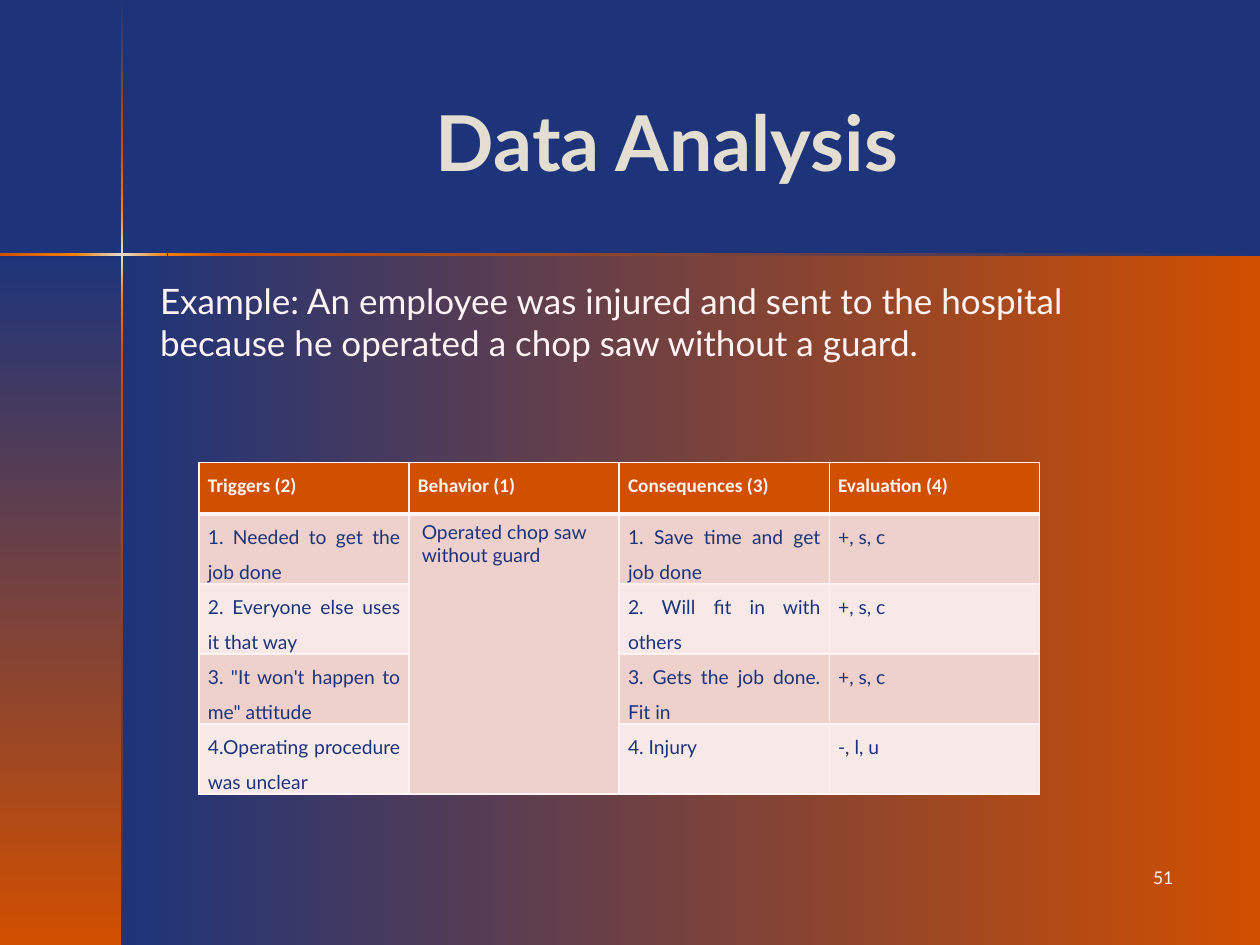
import pptx
import pptx.util
import pptx.dml.color
import pptx.enum.shapes
import pptx.enum.text
import pptx.oxml
import pptx.oxml.ns

Inches = pptx.util.Inches
Pt = pptx.util.Pt
ALIGN = pptx.enum.text.PP_ALIGN
ANCHOR = pptx.enum.text.MSO_ANCHOR

COLORS = {
    "navy": "1E347A",
    "rust": "D04F00",
    "orange": "F07F09",
    "cream": "E3DED1",
    "white": "FFF3F3",
    "band_dark": "EED0CC",
    "band_light": "F7E9E7",
}
NAMESPACE = pptx.oxml.ns.nsdecls("a")
RIGHT, DOWN = 0, 90

HEADERS = ["Triggers (2)", "Behavior (1)", "Consequences (3)", "Evaluation (4)"]
BEHAVIOR = "Operated chop saw without guard"
ROWS = [
    ["1. Needed to get the job done", BEHAVIOR, "1. Save time and get job done", "+, s, c"],
    ["2. Everyone else uses it that way", "", "2. Will fit in with others", "+, s, c"],
    ['3. "It won\'t happen to me" attitude', "", "3. Gets the job done. Fit in", "+, s, c"],
    ["4.Operating procedure was unclear", "", "4. Injury", "-, l, u"],
]


def rgb(name):
    return pptx.dml.color.RGBColor.from_string(COLORS[name])


def style(paragraph, size, color, font="Lato", bold=False, align=None):
    paragraph.font.size = Pt(size)
    paragraph.font.name = font
    paragraph.font.bold = bold
    paragraph.font.color.rgb = rgb(color)
    paragraph.alignment = align


def place(shape, box):
    shape.left, shape.top, shape.width, shape.height = map(Inches, box)


def add_gradient_bar(slide, box, names, angle):
    """Rectangle with evenly spaced gradient stops."""
    shape = slide.shapes.add_shape(
        pptx.enum.shapes.MSO_SHAPE.RECTANGLE, *map(Inches, box))
    shape.shadow.inherit = False
    shape.line.fill.background()
    shape.fill.gradient()
    gradient = shape._element.spPr.find(pptx.oxml.ns.qn("a:gradFill"))
    step = 100000 // (len(names) - 1)
    stops = "".join(
        f'<a:gs pos="{index * step}"><a:srgbClr val="{COLORS[name]}"/></a:gs>'
        for index, name in enumerate(names))
    gradient.getparent().replace(gradient, pptx.oxml.parse_xml(
        f'<a:gradFill {NAMESPACE} rotWithShape="1"><a:gsLst>{stops}</a:gsLst>'
        f'<a:lin ang="{angle * 60000}" scaled="0"/></a:gradFill>'))


def add_backdrop(slide, box):
    """Two gradient panels and a glowing cross where they meet."""
    left, top, width, height = box
    right, bottom = left + width, top + height
    cross_x, cross_y, thick = left + 0.97, top + 2.02, 0.02
    add_gradient_bar(slide, (cross_x, cross_y, right - cross_x, bottom - cross_y),
                     ["navy", "rust"], RIGHT)
    add_gradient_bar(slide, (left, cross_y, cross_x - left, bottom - cross_y),
                     ["navy", "rust"], DOWN)

    glow = ["orange", "cream", "orange"]
    vertical = [(0.01, 1.21, ["navy", "rust"]), (1.21, 1.65, ["rust", "orange"]),
                (1.65, 2.38, glow), (2.38, 2.82, ["orange", "rust"]),
                (2.82, height, ["rust", "navy"])]
    for start, end, names in vertical:
        add_gradient_bar(slide, (cross_x - thick / 2, top + start, thick, end - start),
                         names, DOWN)
    horizontal = [(0, 0.6, ["rust", "orange"]), (0.6, 1.33, glow),
                  (1.33, 1.77, ["orange", "rust"]), (1.77, width, ["rust", "navy"])]
    for start, end, names in horizontal:
        add_gradient_bar(slide, (left + start, cross_y - thick / 2, end - start, thick),
                         names, RIGHT)


def fill_title(slide, box):
    title = slide.shapes.title
    slide.shapes._spTree.append(title._element)  # bring in front of the backdrop
    place(title, box)
    title.text_frame.text = "Data Analysis"
    title.text_frame.vertical_anchor = ANCHOR.MIDDLE
    style(title.text_frame.paragraphs[0], 44, "cream", bold=True, align=ALIGN.CENTER)


def fill_body(slide, box):
    body = slide.placeholders[1]
    slide.shapes._spTree.append(body._element)
    place(body, box)
    body.text_frame.text = ("Example: An employee was injured and sent to the hospital "
                            "because he operated a chop saw without a guard.")
    body.text_frame.auto_size = pptx.enum.text.MSO_AUTO_SIZE.NONE
    paragraph = body.text_frame.paragraphs[0]
    style(paragraph, 20, "white", align=ALIGN.LEFT)
    paragraph.space_before = Pt(4)
    properties = paragraph._p.get_or_add_pPr()
    properties.set("marL", "0")
    properties.set("indent", "0")
    properties.append(pptx.oxml.parse_xml(f"<a:buNone {NAMESPACE}/>"))


def add_page_number(slide, box):
    text_frame = slide.shapes.add_textbox(*map(Inches, box)).text_frame
    text_frame.word_wrap = True
    text_frame.text = "51"
    style(text_frame.paragraphs[0], 10, "white", align=ALIGN.RIGHT)


def set_borders(cell, top, bottom):
    widths = {"lnL": 1, "lnR": 1, "lnT": top, "lnB": bottom}
    properties = cell._tc.get_or_add_tcPr()
    for index, (tag, width) in enumerate(widths.items()):
        properties.insert(index, pptx.oxml.parse_xml(
            f'<a:{tag} {NAMESPACE} w="{Pt(width)}"><a:solidFill>'
            f'<a:srgbClr val="{COLORS["white"]}"/></a:solidFill></a:{tag}>'))


def add_analysis_table(slide, box):
    left, top, width, row_height = box
    content = [HEADERS] + ROWS
    table = slide.shapes.add_table(
        len(content), len(HEADERS), Inches(left), Inches(top), Inches(width),
        Inches(row_height * len(content))).table
    table.cell(1, 1).merge(table.cell(len(ROWS), 1))

    for row, texts in enumerate(content):
        header = row == 0
        band = "rust" if header else "band_dark" if row % 2 else "band_light"
        for column, text in enumerate(texts):
            cell = table.cell(row, column)
            cell.fill.solid()
            cell.fill.fore_color.rgb = rgb(band)
            set_borders(cell, top=3 if row == 1 else 1, bottom=3 if header else 1)
            if cell.is_spanned:
                continue
            cell.text = text
            paragraph = cell.text_frame.paragraphs[0]
            if header:
                style(paragraph, 11, "white", "Calibri", True)
            else:
                style(paragraph, 11, "navy")
            if text != BEHAVIOR:
                paragraph.alignment = ALIGN.JUSTIFY
                paragraph.line_spacing = 1.5
                cell.margin_left = cell.margin_right = Inches(0.07)
                cell.margin_top = cell.margin_bottom = 0


def main():
    presentation = pptx.Presentation()
    presentation.slide_width, presentation.slide_height = Inches(10), Inches(7.5)
    slide = presentation.slides.add_slide(presentation.slide_layouts[1])
    slide.background.fill.solid()
    slide.background.fill.fore_color.rgb = rgb("navy")

    add_backdrop(slide, (0, 0, 10, 7.5))
    fill_body(slide, (1.17, 2.17, 8.25, 4.5))
    add_page_number(slide, (7.33, 6.83, 2.08, 0.5))
    fill_title(slide, (1.17, 0.33, 8.25, 1.57))
    add_analysis_table(slide, (1.58, 3.67, 6.67, 0.41))
    presentation.save("out.pptx")


if __name__ == "__main__":
    main()
